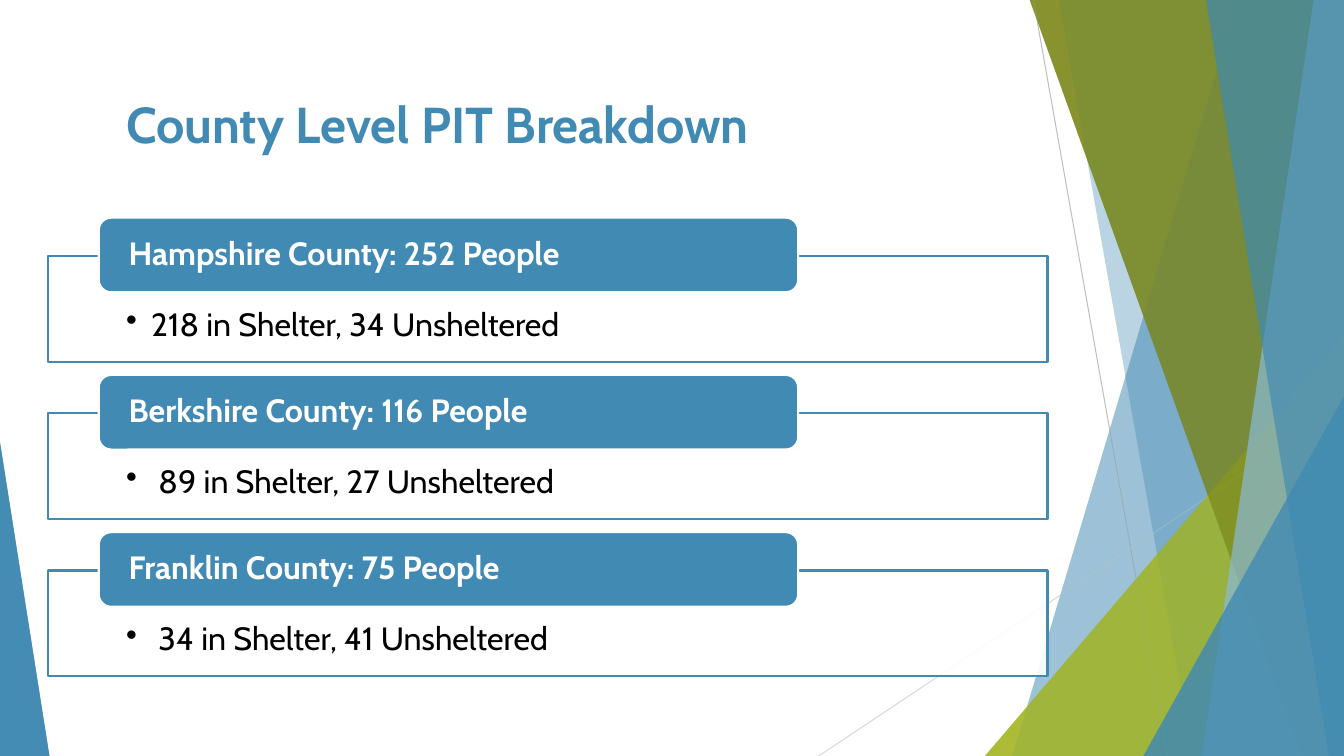
from pptx import Presentation
from pptx.dml.color import RGBColor
from pptx.enum.shapes import MSO_CONNECTOR, MSO_SHAPE
from pptx.enum.text import MSO_ANCHOR, PP_ALIGN
from pptx.oxml.ns import qn
from pptx.util import Inches, Pt
from lxml.etree import SubElement

WIDTH, HEIGHT = 13.33, 7.5
FONT = "Cabin"
BLUE, WHITE, BLACK = "418AB3", "FFFFFF", "000000"

RIBBONS_BACK = [(12.28, 10.04, BLUE, 30), (10.5, 11.83, BLUE, 20)]
RIBBONS_FRONT = [
    (10.21, 12.91, "7D891D", 70),
    (13.03, 11.92, "8ABAD4", 70),
    (11.96, 13.18, BLUE, 65),
]
COUNTIES = [
    ("Hampshire County: 252 People", "218 in Shelter, 34 Unsheltered"),
    ("Berkshire County: 116 People", " 89 in Shelter, 27 Unsheltered"),
    ("Franklin County: 75 People", " 34 in Shelter, 41 Unsheltered"),
]


def rgb(value):
    """Turn a hex string into a colour."""
    return RGBColor.from_string(value)


def paint(sp, fill, alpha=100, line=None):
    """Fill a shape, with opacity in percent, and outline it if asked."""
    sp.shadow.inherit = False
    sp.fill.solid()
    sp.fill.fore_color.rgb = rgb(fill)
    if alpha < 100:
        color = sp.fill._xPr.find(qn("a:solidFill"))[0]
        SubElement(color, qn("a:alpha"), val=str(alpha * 1000))
    if line:
        sp.line.color.rgb = rgb(line)
        sp.line.width = Pt(1.5)
    else:
        sp.line.fill.background()


def style(p, size, color, bold=False):
    """Set the font and alignment of a paragraph."""
    p.alignment = PP_ALIGN.LEFT
    p.font.name, p.font.size, p.font.bold = FONT, Pt(size), bold
    p.font.color.rgb = rgb(color)


def add_block(s, kind, box, fill, alpha=100, line=None):
    """Add a painted preset shape in a box given in inches."""
    sp = s.shapes.add_shape(kind, *map(Inches, box))
    paint(sp, fill, alpha, line)
    return sp


def add_ribbon(s, top, bottom, color, alpha):
    """Add a band from a slanted left edge to the right side of the slide."""
    points = [(WIDTH, -0.01), (WIDTH, HEIGHT), (bottom, HEIGHT)]
    builder = s.shapes.build_freeform(Inches(top), Inches(-0.01))
    builder.add_line_segments([(Inches(x), Inches(y)) for x, y in points])
    paint(builder.convert_to_shape(), color, alpha)


def add_corner(s, left, top, width, apex, color, alpha):
    """Add a triangle that stands on the bottom edge of the slide."""
    box = (left, top, width, HEIGHT - top)
    sp = add_block(s, MSO_SHAPE.ISOSCELES_TRIANGLE, box, color, alpha)
    sp.adjustments[0] = apex


def add_facets(s):
    """Add one layer of translucent bands and triangles."""
    for ribbon in RIBBONS_BACK:
        add_ribbon(s, *ribbon)
    add_corner(s, 9.77, 3.33, 3.56, 1, "A6B727", 72)
    for ribbon in RIBBONS_FRONT:
        add_ribbon(s, *ribbon)
    add_corner(s, 11.34, 3.93, 1.99, 1, BLUE, 80)
    add_corner(s, 0, 4.39, 0.49, 0, BLUE, 85)


def add_hairline(s, start, end, color):
    """Add a thin straight line."""
    line = s.shapes.add_connector(
        MSO_CONNECTOR.STRAIGHT, *map(Inches, (*start, *end)))
    line.line.color.rgb = rgb(color)
    line.line.width = Pt(0.75)
    SubElement(line._element.spPr, qn("a:effectLst"))


def add_backdrop(s):
    """Add two layers of facets with hairlines between them."""
    add_facets(s)
    add_hairline(s, (10.25, 0), (11.58, HEIGHT), "BFBFBF")
    add_hairline(s, (WIDTH, 4.03), (8.12, HEIGHT), "D9D9D9")
    add_facets(s)


def add_title(s, text, box):
    """Place and format the title."""
    title = s.shapes.title
    title.left, title.top, title.width, title.height = map(Inches, box)
    tf = title.text_frame
    tf.text = text
    tf.vertical_anchor = MSO_ANCHOR.TOP
    style(tf.paragraphs[0], 36, BLUE, True)


def write(sp, text, color, bold, anchor, insets):
    """Write one paragraph in a shape and return it."""
    tf = sp.text_frame
    tf.word_wrap = True
    tf.vertical_anchor = anchor
    (tf.margin_left, tf.margin_top,
     tf.margin_right, tf.margin_bottom) = map(Inches, insets)
    p = tf.paragraphs[0]
    p.text = text
    p.line_spacing = 0.9
    style(p, 23, color, bold)
    return p


def add_county(s, heading, detail, left, top, width):
    """Add a county's outlined panel and the heading tab on its top edge."""
    panel = add_block(s, MSO_SHAPE.RECTANGLE, (left, top + 0.38, width, 1.05),
                      WHITE, 90, BLUE)
    p = write(panel, detail, BLACK, False, MSO_ANCHOR.TOP,
              (0.77, 0.52, 0.77, 0.18))
    pPr = p._p.get_or_add_pPr()
    pPr.set("marL", str(Inches(0.25)))
    pPr.set("indent", str(Inches(-0.25)))
    bullet = pPr.makeelement(qn("a:buChar"), {"char": "•"})
    pPr.find(qn("a:defRPr")).addprevious(bullet)
    tab = add_block(s, MSO_SHAPE.ROUNDED_RECTANGLE,
                    (left + 0.5, top, width * 0.7, 0.74), BLUE, line=WHITE)
    write(tab, heading, WHITE, True, MSO_ANCHOR.MIDDLE, (0.26, 0, 0.26, 0))


def add_counties(s, left, top, width, pitch):
    """Stack the counties at an equal pitch."""
    for i, (heading, detail) in enumerate(COUNTIES):
        add_county(s, heading, detail, left, top + i * pitch, width)


def main():
    """Build and save the slide."""
    prs = Presentation()
    prs.slide_width, prs.slide_height = Inches(WIDTH), Inches(HEIGHT)
    s = prs.slides.add_slide(prs.slide_layouts[5])
    add_backdrop(s)
    add_title(s, "County Level PIT Breakdown", (1.15, 0.87, 8.58, 0.92))
    add_counties(s, 0.48, 2.16, 9.91, 1.56)
    prs.save("out.pptx")


if __name__ == "__main__":
    main()
